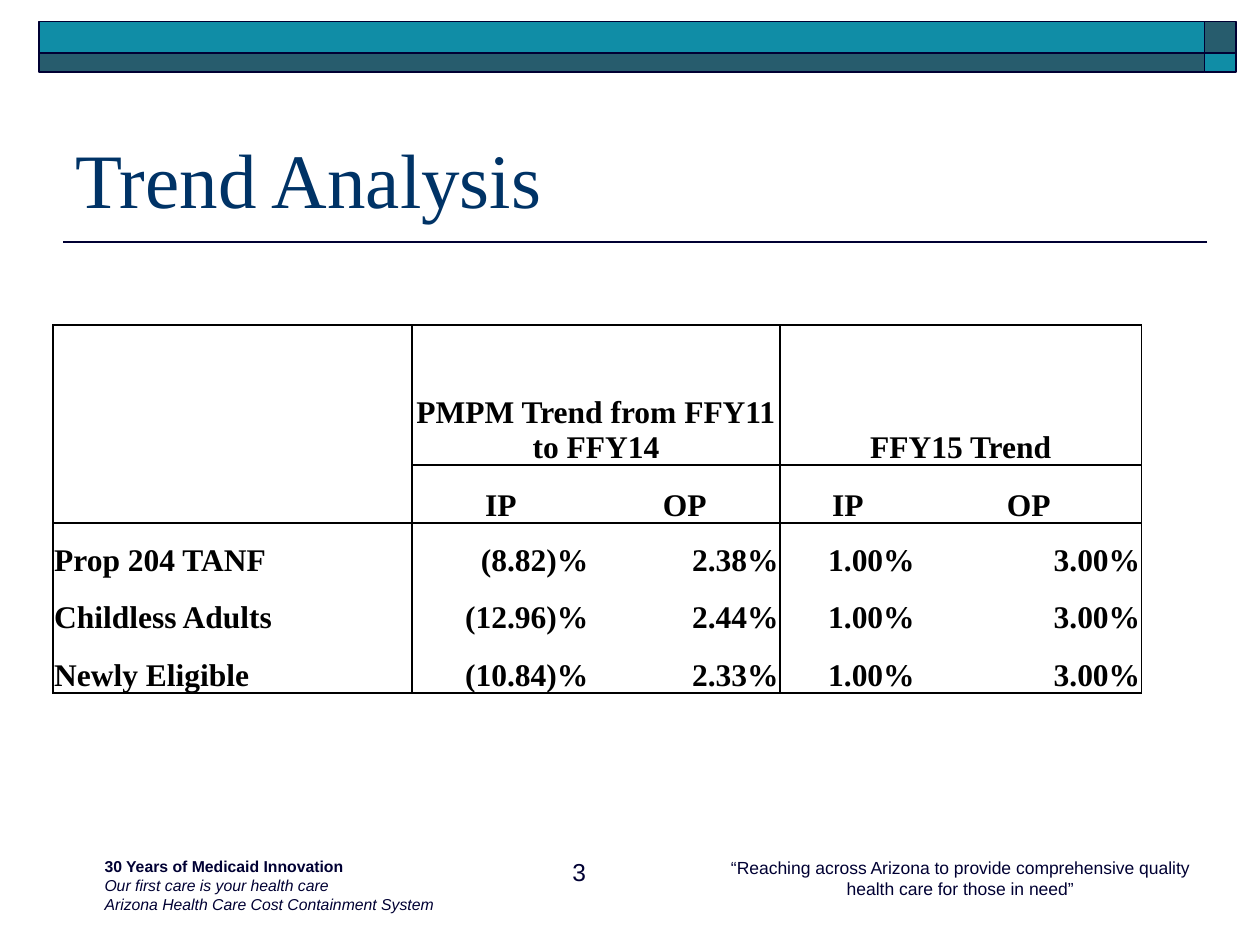
import pptx
import pptx.dml.color
import pptx.enum.shapes
import pptx.enum.text
import pptx.oxml
import pptx.oxml.ns
import pptx.util

ALIGN = pptx.enum.text.PP_ALIGN
ANCHOR = pptx.enum.text.MSO_ANCHOR
PX = 9144
NAVY, BLUE, TEAL, SLATE, BLACK = "000033", "003366", "108DA6", "275C6D", "000000"
SERIF, SANS = "Times New Roman", "Arial"


def rgb(value):
    return pptx.dml.color.RGBColor.from_string(value)


def px(*values):
    return [pptx.util.Emu(v * PX) for v in values]


class Deck:
    """Holds the presentation, its current slide and the shared styling."""

    def __init__(self, width, height):
        self.prs = pptx.Presentation()
        self.prs.slide_width, self.prs.slide_height = px(width, height)
        self.s = self.prs.slides.add_slide(self.prs.slide_layouts[5])

    def style(self, p, font, size, color, align=ALIGN.LEFT, bold=False, italic=False):
        p.alignment = align
        f = p.font
        f.name, f.size, f.bold, f.italic = font, pptx.util.Pt(size), bold, italic
        f.color.rgb = rgb(color)

    def title(self, text, box):
        sp = self.s.shapes.title
        sp.left, sp.top, sp.width, sp.height = px(*box)
        tf = sp.text_frame
        tf.text = text
        tf.auto_size = pptx.enum.text.MSO_AUTO_SIZE.NONE
        tf.vertical_anchor = ANCHOR.BOTTOM
        self.style(tf.paragraphs[0], SERIF, 44, BLUE)

    def rect(self, box, fill):
        sp = self.s.shapes.add_shape(pptx.enum.shapes.MSO_SHAPE.RECTANGLE, *px(*box))
        sp.shadow.inherit = False
        sp.fill.solid()
        sp.fill.fore_color.rgb = rgb(fill)
        sp.line.color.rgb = rgb(NAVY)
        sp.line.width = pptx.util.Pt(1)

    def line(self, x1, y1, x2, y2):
        kind = pptx.enum.shapes.MSO_CONNECTOR.STRAIGHT
        c = self.s.shapes.add_connector(kind, *px(x1, y1, x2, y2))
        c.line.color.rgb = rgb(NAVY)
        c.line.width = pptx.util.Pt(1)
        pptx.oxml.ns.qn("a:effectLst")
        c._element.spPr.append(
            pptx.oxml.parse_xml(f'<a:effectLst {pptx.oxml.ns.nsdecls("a")}/>'))

    def text(self, box, lines, size, align=ALIGN.LEFT, indent=10):
        tf = self.s.shapes.add_textbox(*px(*box)).text_frame
        tf.word_wrap = True
        tf.margin_left = px(indent)[0]
        for i, (text, bold, italic) in enumerate(lines):
            p = tf.paragraphs[0] if i == 0 else tf.add_paragraph()
            p.text = text
            self.style(p, SANS, size, NAVY, align, bold, italic)

    def borders(self, cell, **sides):
        tcPr = cell._tc.get_or_add_tcPr()
        for i, (side, shown) in enumerate(sides.items()):
            fill = (f'<a:solidFill><a:srgbClr val="{BLACK}"/></a:solidFill>'
                    if shown else "<a:noFill/>")
            tcPr.insert(i, pptx.oxml.parse_xml(
                f'<a:ln{side} {pptx.oxml.ns.nsdecls("a")} w="12700">{fill}</a:ln{side}>'))

    def table(self, left, top, widths, heights, rows, merges, edges_x, edges_y):
        box = px(left, top, sum(widths), sum(heights))
        t = self.s.shapes.add_table(len(rows), len(widths), *box).table
        t.first_row = t.horz_banding = False
        for column, width in zip(t.columns, px(*widths)):
            column.width = width
        for row, height in zip(t.rows, px(*heights)):
            row.height = height
        for r, c in merges:
            t.cell(r, c).merge(t.cell(r, c + 1))
        for r, values in enumerate(rows):
            for c, value in enumerate(values):
                cell = t.cell(r, c)
                cell.text = value
                cell.vertical_anchor = ANCHOR.BOTTOM
                cell.margin_left, cell.margin_right, cell.margin_top, cell.margin_bottom = px(1, 1, 1, 0)
                align = ALIGN.CENTER if r < 2 else ALIGN.RIGHT if c else ALIGN.LEFT
                self.style(cell.text_frame.paragraphs[0], SERIF, 18, BLACK, align, True)
                cell.fill.background()
                ys = edges_y | {1} if c else edges_y
                span = cell.span_width if cell.is_merge_origin else 1
                self.borders(cell, L=c in edges_x, R=c + span in edges_x,
                             T=r in ys, B=r + 1 in ys)


def main():
    d = Deck(1000, 750)
    d.line(958, 192, 50, 192)
    for y, h, wide, corner in ((17, 25, TEAL, SLATE), (42, 15, SLATE, TEAL)):
        d.rect((31, y, 925, h), wide)
        d.rect((956, y, 25, h), corner)
    d.title("Trend Analysis", (50, 58, 900, 125))
    rows = [
        ("", "PMPM Trend from FFY11 to FFY14", "", "FFY15 Trend", ""),
        ("", "IP", "OP", "IP", "OP"),
        ("Prop 204 TANF", "(8.82)%", "2.38%", "1.00%", "3.00%"),
        ("Childless Adults", "(12.96)%", "2.44%", "1.00%", "3.00%"),
        ("Newly Eligible", "(10.84)%", "2.33%", "1.00%", "3.00%"),
    ]
    d.table(42, 258, (285, 141, 151, 108, 179), (111, 46, 44, 45, 46), rows,
            merges=((0, 1), (0, 3)), edges_x={0, 1, 3, 5}, edges_y={0, 2, 5})
    d.text((25, 675, 933, 52), [
        ("30 Years of Medicaid Innovation", True, False),
        ("Our first care is your health care", False, True),
        ("Arizona Health Care Cost Containment System", False, True),
    ], 9, indent=58)
    d.text((242, 675, 233, 52), [("3", False, False)], 14, ALIGN.RIGHT)
    d.text((558, 675, 408, 43), [
        ("“Reaching across Arizona to provide comprehensive quality health care for those in need”",
         False, False)], 10, ALIGN.CENTER)
    d.prs.save("out.pptx")


if __name__ == "__main__":
    main()
